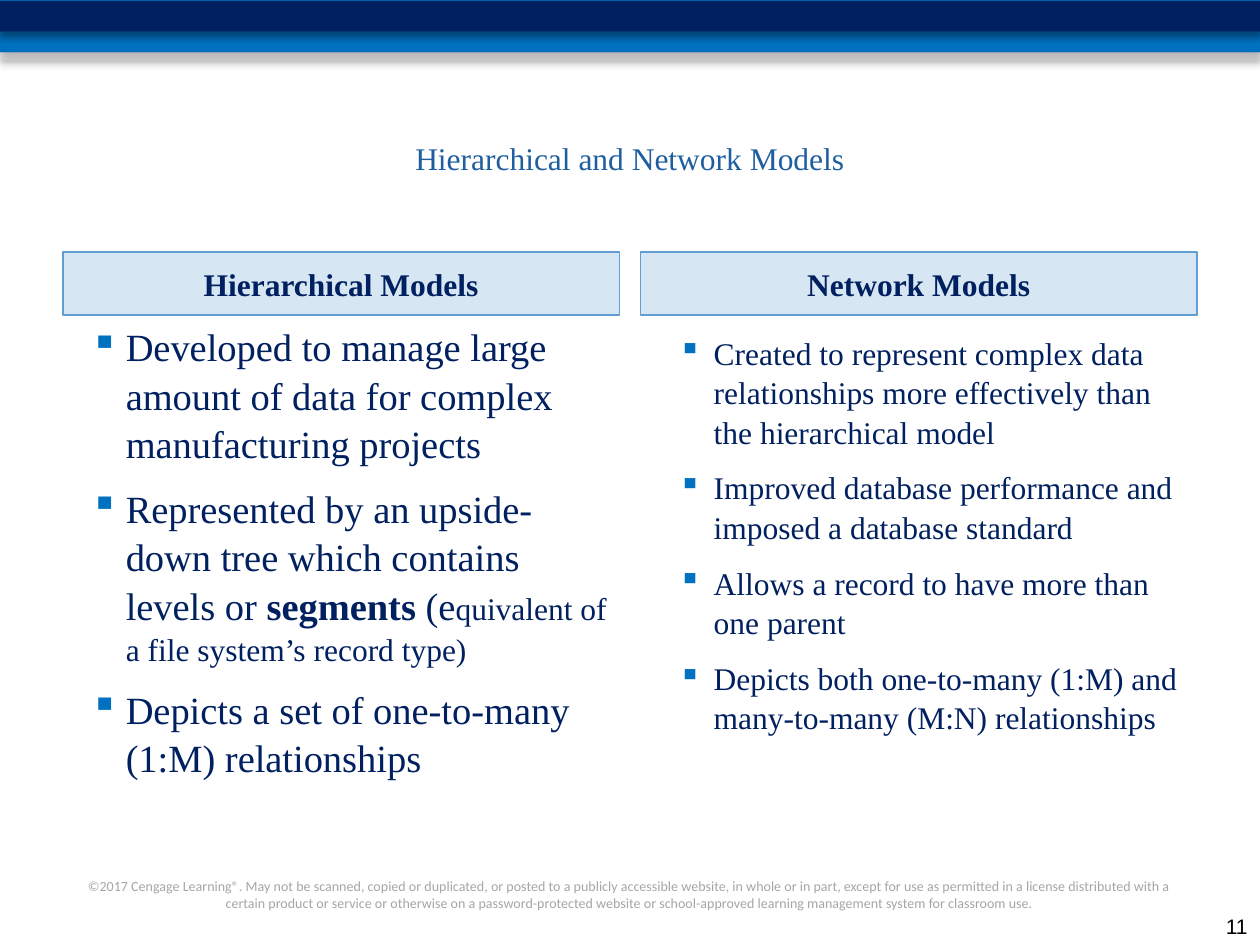
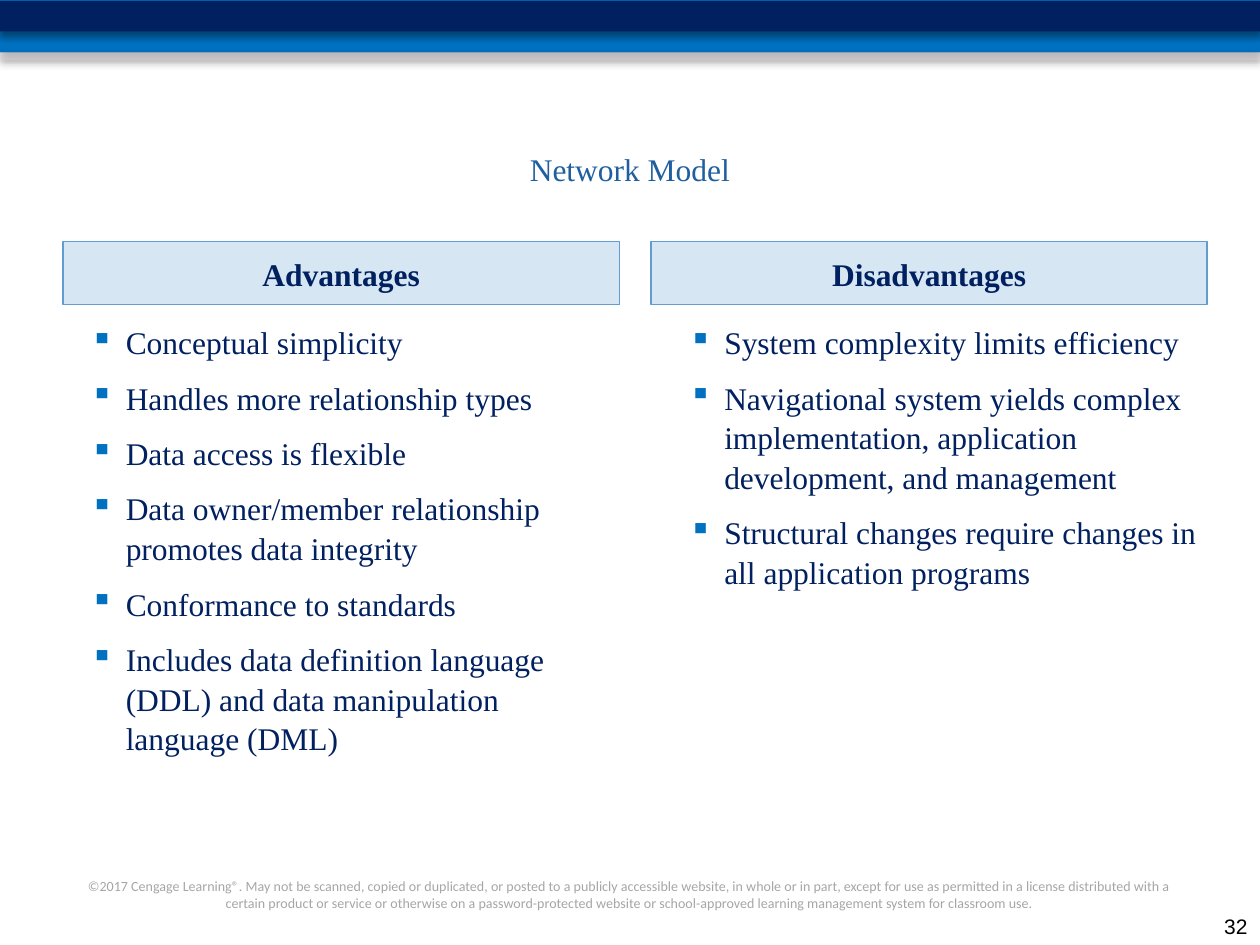
import pptx
import pptx.dml.color
import pptx.enum.shapes
import pptx.enum.text
import pptx.oxml
import pptx.oxml.ns
import pptx.util

SLIDES = [
    {
        "title": "Hierarchical and Network Models", "title_top": 8,
        "page": "11", "head_top": 24,
        "columns": [
            {"head": "Hierarchical Models", "head_left": 6, "list_at": (6, 30), "items": [
                [("Developed to manage large amount of data for complex "
                  "manufacturing projects", "large")],
                [("Represented by an upside-down tree which contains levels or ", "large"),
                 ("segments ", "strong"),
                 ("(e", "large"),
                 ("quivalent of a file system’s record type)", "text")],
                [("Depicts a set of one-to-many (1:M) relationships", "large")],
            ]},
            {"head": "Network Models", "head_left": 61, "list_at": (62, 31), "items": [
                "Created to represent complex data relationships more effectively "
                "than the hierarchical model",
                "Improved database performance and imposed a database standard",
                "Allows a record to have more than one parent",
                "Depicts both one-to-many (1:M) and many-to-many (M:N) relationships",
            ]},
        ],
    },
    {
        "title": "Network Model", "title_top": 9,
        "page": "32", "head_top": 23,
        "columns": [
            {"head": "Advantages", "head_left": 6, "list_at": (6, 30), "items": [
                "Conceptual simplicity",
                "Handles more relationship types",
                "Data access is flexible",
                "Data owner/member relationship promotes data integrity",
                "Conformance to standards",
                "Includes data definition language (DDL) and data manipulation "
                "language (DML)",
            ]},
            {"head": "Disadvantages", "head_left": 62, "list_at": (63, 30), "items": [
                "System complexity limits efficiency",
                "Navigational system yields complex implementation, application "
                "development, and management",
                "Structural changes require changes in all application programs",
            ]},
        ],
    },
]

NOTICE = (
    "©2017 Cengage Learning®. May not be scanned, copied or duplicated, or posted to a "
    "publicly accessible website, in whole or in part, except for use as permitted in a "
    "license distributed with a certain product or service or otherwise on a "
    "password-protected website or school-approved learning management system for "
    "classroom use."
)

THEME = {
    "navy": "002060", "blue": "0070C0", "sky": "629DD1", "haze": "D8D3D9",
    # style: font, size, colour, bold
    "title": ("Times New Roman", 18, "1F5FA0", False),
    "head": ("Times New Roman", 18, "002060", True),
    "text": ("Times New Roman", 18, "002060", False),
    "large": ("Times New Roman", 22, "002060", False),
    "strong": ("Times New Roman", 22, "002060", True),
    "notice": ("Calibri", 8, "A6A6A6", False),
    "page": ("Arial", 12, "000000", False),
}

# Top, height, colour and opacity in percent, from back to front.
BANDS = [(0, 5, "blue", 100), (0.1, 2.9, "navy", 100), (5, 0.75, "haze", 50)]
WIDE, HIGH = 120, 90
COLUMN = 53

ALIGN = pptx.enum.text.PP_ALIGN
ANCHOR = pptx.enum.text.MSO_ANCHOR


def grid(*counts):
    """Turn counts of twelfths of an inch into lengths."""
    return [pptx.util.Inches(count / 12) for count in counts]


def color(code):
    return pptx.dml.color.RGBColor.from_string(code)


def node(inner):
    """Parse one drawing element, written without its prefix declaration."""
    tag, rest = inner[:inner.index(" ")], inner[inner.index(" "):]
    return pptx.oxml.parse_xml(f"{tag} {pptx.oxml.ns.nsdecls('a')}{rest}")


def add_run(para, text, style):
    font, size, code, bold = THEME[style]
    run = para.add_run()
    run.text = text
    run.font.name = font
    run.font.size = pptx.util.Pt(size)
    run.font.bold = bold
    run.font.color.rgb = color(code)


def set_text(shape, text, style, align, anchor):
    frame = shape.text_frame
    frame.word_wrap = True
    frame.vertical_anchor = anchor
    para = frame.paragraphs[0]
    para.alignment = align
    add_run(para, text, style)
    return para


def add_rect(slide, box, code, alpha):
    """Draw a plain rectangle with its opacity in percent."""
    kind = pptx.enum.shapes.MSO_SHAPE.RECTANGLE
    shape = slide.shapes.add_shape(kind, *grid(*box))
    shape.shadow.inherit = False
    shape.fill.solid()
    shape.fill.fore_color.rgb = color(code)
    shape.line.fill.background()
    if alpha < 100:
        fill = shape.fill._xPr.find(".//" + pptx.oxml.ns.qn("a:srgbClr"))
        fill.append(node(f'<a:alpha val="{alpha * 1000}"/>'))
    return shape


def add_bands(slide):
    for top, high, name, alpha in BANDS:
        band = add_rect(slide, (0, top, WIDE, high), THEME[name], alpha)
        glow = band.element.spPr.find(pptx.oxml.ns.qn("a:effectLst"))
        glow.append(node(
            '<a:outerShdw blurRad="52000" dist="25400" dir="5400000" rotWithShape="0">'
            '<a:srgbClr val="000000"><a:alpha val="40000"/></a:srgbClr>'
            '</a:outerShdw>'))


def add_label(slide, box, text, style, align, anchor):
    label = slide.shapes.add_textbox(*grid(*box))
    set_text(label, text, style, align, anchor)


def add_head(slide, left, top, text):
    head = add_rect(slide, (left, top, COLUMN, 6), THEME["sky"], 25)
    head.line.color.rgb = color(THEME["sky"])
    head.line.width = pptx.util.Pt(1)
    para = set_text(head, text, "head", ALIGN.CENTER, ANCHOR.MIDDLE)
    para.line_spacing = 1.05


def add_list(slide, place, items):
    """Add bullets; an item is a text or a list of (text, style) runs."""
    box = slide.shapes.add_textbox(*grid(*place, COLUMN, 51))
    frame = box.text_frame
    frame.word_wrap = True
    for rank, item in enumerate(items):
        para = frame.add_paragraph() if rank else frame.paragraphs[0]
        props = para._p.get_or_add_pPr()
        props.set("marL", str(pptx.util.Inches(0.4)))
        props.set("indent", str(pptx.util.Inches(-0.28)))
        props.append(node(f'<a:buClr ><a:srgbClr val="{THEME["blue"]}"/></a:buClr>'))
        props.append(node('<a:buChar char="▪"/>'))
        para.line_spacing = 1.05
        para.space_before = pptx.util.Pt(3 if rank else 0)
        para.space_after = pptx.util.Pt(6)
        for text, style in [(item, "text")] if isinstance(item, str) else item:
            add_run(para, text, style)


def add_title(slide, text, top):
    title = slide.shapes.title
    title.left, title.top, title.width, title.height = grid(5, top, 110, 14)
    para = set_text(title, text, "title", ALIGN.CENTER, ANCHOR.MIDDLE)
    para.line_spacing = 1.05


def add_slide(deck, data):
    slide = deck.slides.add_slide(deck.slide_layouts[5])
    add_bands(slide)
    add_label(slide, (7, 83, 106, 4.3), NOTICE, "notice", ALIGN.CENTER, ANCHOR.TOP)
    add_title(slide, data["title"], data["title_top"])
    for column in data["columns"]:
        add_head(slide, column["head_left"], data["head_top"], column["head"])
        add_list(slide, column["list_at"], column["items"])
    add_label(slide, (114, 86, 6, 4), data["page"], "page", ALIGN.RIGHT, ANCHOR.BOTTOM)


def main():
    deck = pptx.Presentation()
    deck.slide_width, deck.slide_height = grid(WIDE, HIGH)
    for data in SLIDES:
        add_slide(deck, data)
    deck.save("out.pptx")


if __name__ == "__main__":
    main()
